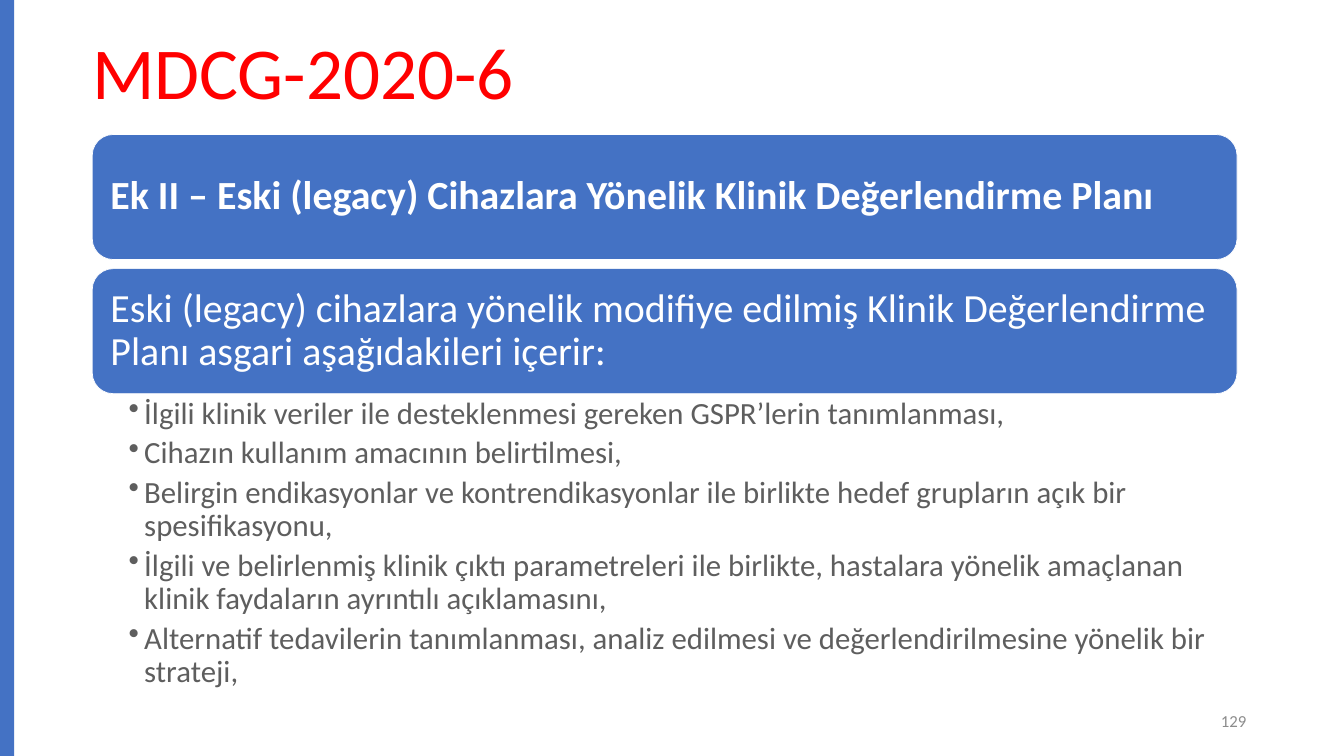
from pptx import Presentation
from pptx.dml.color import RGBColor
from pptx.enum.shapes import MSO_SHAPE
from pptx.enum.text import MSO_ANCHOR, PP_ALIGN
from pptx.oxml.ns import qn
from pptx.util import Cm, Pt
from lxml import etree

RECT, ROUND = MSO_SHAPE.RECTANGLE, MSO_SHAPE.ROUNDED_RECTANGLE
TOP, MID = MSO_ANCHOR.TOP, MSO_ANCHOR.MIDDLE
LEFT, RIGHT = PP_ALIGN.LEFT, PP_ALIGN.RIGHT
FONT = "Calibri"
BLUE, WHITE, RED = "4472C4", "FFFFFF", "FF0000"
DARK, GRAY = "5E5E5E", "8C8C8C"

# Content
TITLE = "MDCG-2020-6"
BARS = [
    ("Ek II – Eski (legacy) Cihazlara Yönelik Klinik Değerlendirme Planı", True),
    ("Eski (legacy) cihazlara yönelik modifiye edilmiş Klinik Değerlendirme "
     "Planı asgari aşağıdakileri içerir:", False),
]
ITEMS = [
    "İlgili klinik veriler ile desteklenmesi gereken GSPR’lerin tanımlanması,",
    "Cihazın kullanım amacının belirtilmesi,",
    "Belirgin endikasyonlar ve kontrendikasyonlar ile birlikte hedef grupların "
    "açık bir spesifikasyonu,",
    "İlgili ve belirlenmiş klinik çıktı parametreleri ile birlikte, hastalara "
    "yönelik amaçlanan klinik faydaların ayrıntılı açıklamasını,",
    "Alternatif tedavilerin tanımlanması, analiz edilmesi ve "
    "değerlendirilmesine yönelik bir strateji,",
]
PAGE = "129"

# Layout in cm
WIDE, HIGH = 67.74, 38.1
BAR_X, BAR_Y, BAR_W, BAR_H, GAP = 4.65, 6.78, 57.7, 6.3, 0.46


def paint(color):
    return RGBColor.from_string(color)


def bullet(para):
    props = para._p.get_or_add_pPr()
    props.set("lvl", "1")
    props.set("marL", str(Cm(0.79)))
    props.set("indent", str(-Cm(0.79)))
    etree.SubElement(props, qn("a:buChar")).set("char", "•")


def block(kind, x, y, w, h, line=None):
    shape = slide.shapes.add_shape(kind, Cm(x), Cm(y), Cm(w), Cm(h))
    shape.shadow.inherit = False
    shape.fill.solid()
    shape.fill.fore_color.rgb = paint(BLUE)
    if line:
        shape.line.color.rgb = paint(line)
        shape.line.width = Pt(1)
    else:
        shape.line.fill.background()
    return shape


def box(x, y, w, h):
    return slide.shapes.add_textbox(Cm(x), Cm(y), Cm(w), Cm(h))


def write(shape, *lines, size, color, bold=False, align=LEFT, anchor=TOP,
          inset=(0.25, 0.13, 0.25, 0.13), space=0.9, after=0, dots=False):
    frame = shape.text_frame
    frame.word_wrap = True
    frame.vertical_anchor = anchor
    (frame.margin_left, frame.margin_top,
     frame.margin_right, frame.margin_bottom) = map(Cm, inset)
    for i, line in enumerate(lines):
        para = frame.add_paragraph() if i else frame.paragraphs[0]
        if dots:
            bullet(para)
        para.alignment = align
        para.line_spacing = space
        para.space_after = Pt(after)
        run = para.add_run()
        run.text = line
        font = run.font
        font.name, font.size, font.bold = FONT, Pt(size), bold
        font.color.rgb = paint(color)


deck = Presentation()
deck.slide_width, deck.slide_height = Cm(WIDE), Cm(HIGH)
slide = deck.slides.add_slide(deck.slide_layouts[6])

# Title and side stripe
write(box(4.14, 1.6, 52.45, 7.37), TITLE, size=104.4, color=RED,
      inset=(0.51, 0.25, 0.51, 0.25))
block(RECT, 0, 0, 0.71, HIGH)

# Heading bars
for i, (text, bold) in enumerate(BARS):
    bar = block(ROUND, BAR_X, BAR_Y + i * (BAR_H + GAP), BAR_W, BAR_H, WHITE)
    write(bar, text, size=57, color=WHITE, bold=bold, anchor=MID,
          inset=(0.61,) * 4)

# Bullet list below the last bar
list_y = BAR_Y + len(BARS) * (BAR_H + GAP) - GAP
write(box(BAR_X, list_y, BAR_W, 15.72), *ITEMS, size=44, color=DARK,
      inset=(1.83, 0.2, 1.12, 0.2), after=9, dots=True)

# Page number
write(box(47.83, 35.3, 15.24, 2.03), PAGE, size=24, color=GRAY,
      align=RIGHT, anchor=MID, space=1.0)

deck.save("out.pptx")
